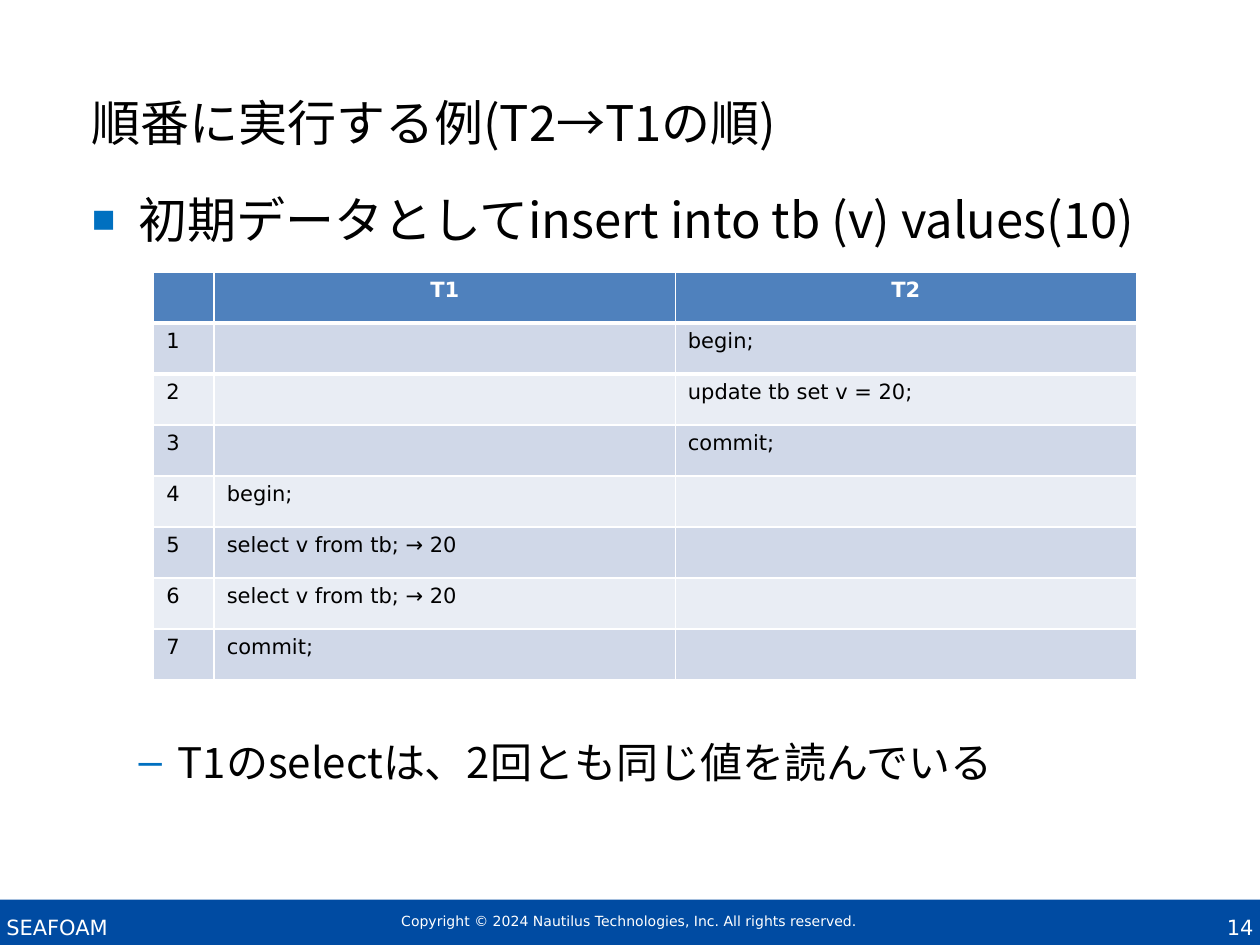
from dataclasses import dataclass

from lxml.etree import SubElement
from pptx import Presentation
from pptx.dml.color import RGBColor
from pptx.enum.shapes import MSO_SHAPE
from pptx.enum.text import MSO_ANCHOR, MSO_AUTO_SIZE, PP_ALIGN
from pptx.oxml.ns import qn
from pptx.util import Inches, Pt

SANS = "DejaVu Sans"
JAPANESE = "Noto Sans CJK JP"
BULLET_FONT = "Arial"
WHITE, BLACK = "FFFFFF", "000000"
FOOTER_BLUE, BULLET_BLUE, HEADER_BLUE = "004BA2", "0070C0", "4F81BD"
BAND_FILLS = ("D0D8E8", "E9EDF4")


@dataclass(frozen=True)
class Box:
    left: float
    top: float
    width: float
    height: float

    def lengths(self) -> tuple:
        return tuple(map(Inches, (self.left, self.top, self.width, self.height)))


@dataclass(frozen=True)
class FooterText:
    text: str
    box: Box
    size: int
    align: PP_ALIGN
    anchor: MSO_ANCHOR = MSO_ANCHOR.TOP


@dataclass(frozen=True)
class Bullet:
    text: str
    size: int
    level: int
    indent: float
    hanging: float
    character: str
    percent: int
    space_before: int = 0


FOOTER_TEXTS = (
    FooterText("Copyright © 2024 Nautilus Technologies, Inc. All rights reserved.",
               Box(3.14, 7.24, 3.71, 0.13), 8, PP_ALIGN.CENTER),
    FooterText("SEAFOAM", Box(0.05, 7.26, 1.2, 0.2), 12, PP_ALIGN.LEFT),
    FooterText("14", Box(9.49, 7.21, 0.46, 0.25), 12, PP_ALIGN.RIGHT, MSO_ANCHOR.BOTTOM),
)
BULLETS = (
    Bullet("初期データとしてinsert into tb (v) values(10)", 28, 0, 0.37, 0.37, "■", 80),
    Bullet("T1のselectは、2回とも同じ値を読んでいる", 24, 1, 0.68, 0.31, "–", 100, 279),
)
SCHEDULE = (
    ("", "T1", "T2"),
    ("1", "", "begin;"),
    ("2", "", "update tb set v = 20;"),
    ("3", "", "commit;"),
    ("4", "begin;", ""),
    ("5", "select v from tb; → 20", ""),
    ("6", "select v from tb; → 20", ""),
    ("7", "commit;", ""),
)
COLUMN_WIDTHS = (0.48, 3.66, 3.66)
TABLE_HEIGHT = 3.24


def color(value: str) -> RGBColor:
    return RGBColor.from_string(value)


def write(paragraph, text: str, *, size: int, font: str = SANS, fill: str = BLACK,
          bold: bool = False, align: PP_ALIGN = PP_ALIGN.LEFT) -> None:
    paragraph.alignment = align
    run = paragraph.add_run()
    run.text = text
    run.font.size = Pt(size)
    run.font.bold = bold
    run.font.color.rgb = color(fill)
    run.font.name = font
    SubElement(run.font._element, qn("a:ea"), typeface=font)


def place(shape, box: Box) -> None:
    shape.left, shape.top, shape.width, shape.height = box.lengths()


def add_footer(slide) -> None:
    bar = slide.shapes.add_shape(MSO_SHAPE.RECTANGLE, *Box(0, 7.14, 10, 0.36).lengths())
    bar.shadow.inherit = False
    bar.fill.solid()
    bar.fill.fore_color.rgb = color(FOOTER_BLUE)
    bar.line.fill.background()
    for item in FOOTER_TEXTS:
        frame = slide.shapes.add_textbox(*item.box.lengths()).text_frame
        frame.margin_left = frame.margin_top = frame.margin_right = frame.margin_bottom = 0
        frame.vertical_anchor = item.anchor
        frame.word_wrap = False
        write(frame.paragraphs[0], item.text, size=item.size, fill=WHITE, align=item.align)


def add_title(slide, text: str) -> None:
    title = slide.shapes.title
    place(title, Box(0.63, 0.6, 8.86, 0.73))
    title.text_frame.auto_size = MSO_AUTO_SIZE.NONE
    title.text_frame.vertical_anchor = MSO_ANCHOR.MIDDLE
    write(title.text_frame.paragraphs[0], text, size=28, font=JAPANESE)


def add_bullet_mark(paragraph, bullet: Bullet) -> None:
    properties = paragraph._p.get_or_add_pPr()
    properties.set("marL", str(Inches(bullet.indent)))
    properties.set("indent", str(-Inches(bullet.hanging)))
    mark_color = SubElement(properties, qn("a:buClr"))
    SubElement(mark_color, qn("a:srgbClr"), val=BULLET_BLUE)
    SubElement(properties, qn("a:buSzPct"), val=str(bullet.percent * 1000))
    SubElement(properties, qn("a:buFont"), typeface=BULLET_FONT)
    SubElement(properties, qn("a:buChar"), char=bullet.character)


def add_bullets(slide) -> None:
    body = slide.placeholders[1]
    place(body, Box(0.63, 1.45, 8.87, 5.69))
    frame = body.text_frame
    frame.auto_size = MSO_AUTO_SIZE.NONE
    for index, bullet in enumerate(BULLETS):
        paragraph = frame.add_paragraph() if index else frame.paragraphs[0]
        paragraph.level = bullet.level
        add_bullet_mark(paragraph, bullet)
        paragraph.space_before = Pt(bullet.space_before)
        write(paragraph, bullet.text, size=bullet.size, font=JAPANESE)


def add_cell_border(cell, side: str, width: float) -> None:
    border = SubElement(cell._tc.get_or_add_tcPr(), qn(f"a:{side}"), w=str(Pt(width)))
    fill = SubElement(border, qn("a:solidFill"))
    SubElement(fill, qn("a:srgbClr"), val=WHITE)


def add_schedule(slide) -> None:
    box = Box(1.22, 2.16, sum(COLUMN_WIDTHS), TABLE_HEIGHT)
    table = slide.shapes.add_table(len(SCHEDULE), len(COLUMN_WIDTHS), *box.lengths()).table
    for column, width in zip(table.columns, COLUMN_WIDTHS):
        column.width = Inches(width)
    for row_index, texts in enumerate(SCHEDULE):
        header = row_index == 0
        fill = HEADER_BLUE if header else BAND_FILLS[(row_index - 1) % 2]
        for column_index, text in enumerate(texts):
            cell = table.cell(row_index, column_index)
            if header:
                add_cell_border(cell, "lnB", 3)
            elif row_index == 1:
                add_cell_border(cell, "lnT", 3)
            cell.fill.solid()
            cell.fill.fore_color.rgb = color(fill)
            if text:
                write(cell.text_frame.paragraphs[0], text, size=12, bold=header,
                      fill=WHITE if header else BLACK,
                      align=PP_ALIGN.CENTER if header else PP_ALIGN.LEFT)


def main() -> None:
    presentation = Presentation()
    presentation.slide_width, presentation.slide_height = Inches(10), Inches(7.5)
    slide = presentation.slides.add_slide(presentation.slide_layouts[1])
    add_footer(slide)
    add_bullets(slide)
    add_title(slide, "順番に実行する例(T2→T1の順)")
    add_schedule(slide)
    presentation.save("out.pptx")


if __name__ == "__main__":
    main()
